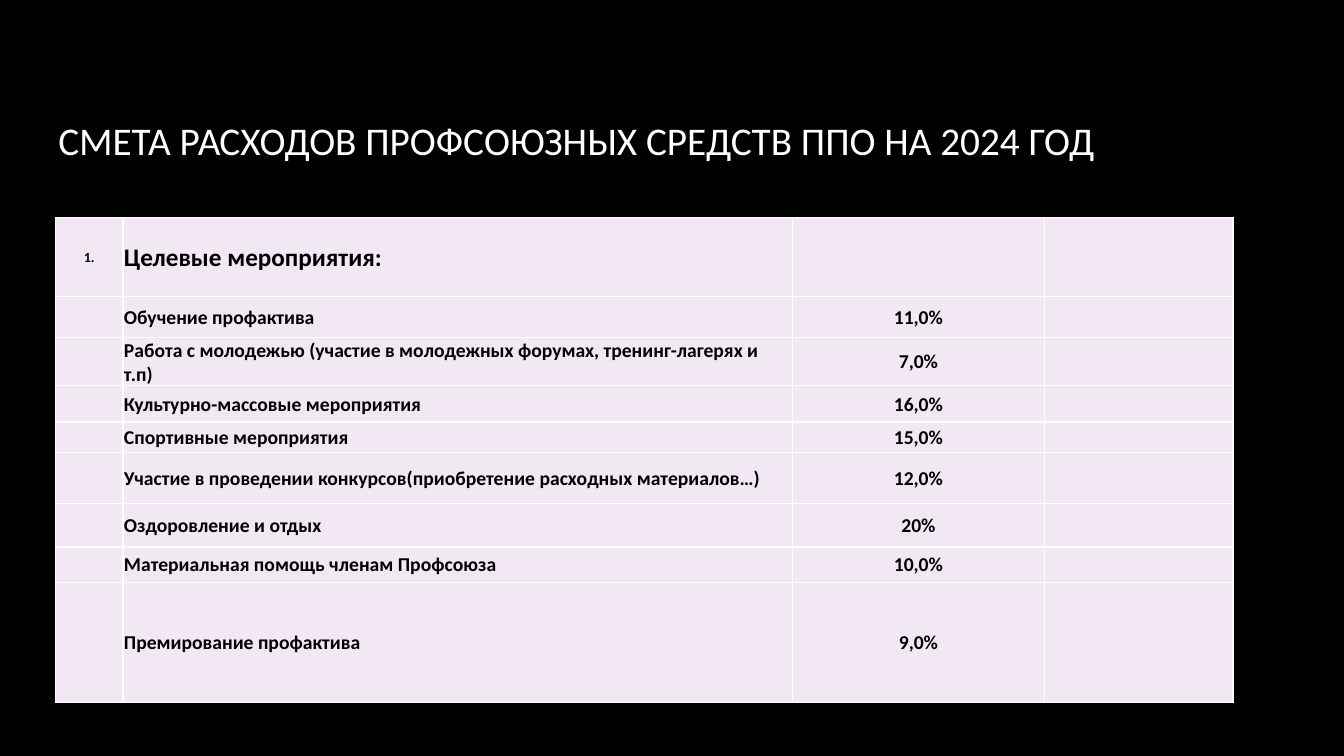
from lxml import etree
from pptx import Presentation
from pptx.dml.color import RGBColor
from pptx.enum.text import MSO_ANCHOR, PP_ALIGN
from pptx.oxml.ns import qn
from pptx.util import Inches, Pt

MIDDLE = MSO_ANCHOR.MIDDLE
LEFT, CENTER = PP_ALIGN.LEFT, PP_ALIGN.CENTER
FONT = "Calibri"
COLORS = {"page": "000000", "title": "FFFFFF", "cell": "F1E8F4",
          "text": "000000", "border": "FFFFFF"}

TITLE = "СМЕТА РАСХОДОВ ПРОФСОЮЗНЫХ СРЕДСТВ ППО НА 2024 ГОД"
HEADING = ("1.", "Целевые мероприятия:")
EXPENSES = [
    ("Обучение профактива", "11,0%"),
    ("Работа с молодежью (участие в молодежных форумах, тренинг-лагерях и т.п)", "7,0%"),
    ("Культурно-массовые мероприятия", "16,0%"),
    ("Спортивные мероприятия", "15,0%"),
    ("Участие в проведении конкурсов(приобретение расходных материалов…)", "12,0%"),
    ("Оздоровление и отдых", "20%"),
    ("Материальная помощь членам Профсоюза", "10,0%"),
    ("Премирование профактива", "9,0%"),
]
COLUMN_WIDTHS = [0.67, 6.64, 2.5, 1.87]
ROW_HEIGHTS = [0.78, 0.41, 0.31, 0.36, 0.3, 0.51, 0.43, 0.35, 1.19]


def color(name):
    return RGBColor.from_string(COLORS[name])


def write(frame, text, size=14, ink="text", bold=False, align=LEFT):
    para = frame.paragraphs[0]
    para.alignment = align
    span = para.add_run()
    span.text = text
    span.font.name = FONT
    span.font.size = Pt(size)
    span.font.bold = bold
    span.font.color.rgb = color(ink)


def format_cell(cell):
    """Set the margins, borders and fill of a cell."""
    cell.vertical_anchor = MIDDLE
    cell.margin_left = cell.margin_right = cell.margin_top = Inches(0.01)
    cell.margin_bottom = 0
    properties = cell._tc.get_or_add_tcPr()
    for side in ("a:lnL", "a:lnR", "a:lnT", "a:lnB"):
        line = etree.SubElement(properties, qn(side), w=str(Pt(1)))
        fill = etree.SubElement(line, qn("a:solidFill"))
        etree.SubElement(fill, qn("a:srgbClr"), val=COLORS["border"])
    cell.fill.solid()
    cell.fill.fore_color.rgb = color("cell")


def add_title(page, left, top, width, height):
    box = page.shapes.add_textbox(Inches(left), Inches(top), Inches(width), Inches(height))
    frame = box.text_frame
    frame.word_wrap = True
    frame.vertical_anchor = MIDDLE
    write(frame, TITLE, size=28, ink="title")


def add_budget(page, left, top):
    table = page.shapes.add_table(
        len(ROW_HEIGHTS), len(COLUMN_WIDTHS), Inches(left), Inches(top),
        Inches(sum(COLUMN_WIDTHS)), Inches(sum(ROW_HEIGHTS))).table
    table.first_row = table.horz_banding = False
    for column, width in zip(table.columns, COLUMN_WIDTHS):
        column.width = Inches(width)
    for row, height in zip(table.rows, ROW_HEIGHTS):
        row.height = Inches(height)
    for cell in table.iter_cells():
        format_cell(cell)

    # Section heading
    number, heading = HEADING
    write(table.cell(0, 0).text_frame, number, size=10, bold=True, align=CENTER)
    write(table.cell(0, 1).text_frame, heading, size=18, bold=True)

    # Expense items and their shares
    for index, (item, share) in enumerate(EXPENSES, start=1):
        write(table.cell(index, 1).text_frame, item, bold=True)
        write(table.cell(index, 2).text_frame, share, bold=True, align=CENTER)

    # Small type in empty cells keeps the rows at their set height
    for cell in table.iter_cells():
        if not cell.text:
            para = cell.text_frame.paragraphs[0]
            etree.SubElement(para._p, qn("a:endParaRPr"), sz="1000")


def main():
    deck = Presentation()
    deck.slide_width, deck.slide_height = Inches(13.33), Inches(7.5)
    page = deck.slides.add_slide(deck.slide_layouts[6])
    page.background.fill.solid()
    page.background.fill.fore_color.rgb = color("page")
    add_title(page, 0.48, 0.59, 11.08, 1.59)
    add_budget(page, 0.55, 2.16)
    deck.save("out.pptx")


if __name__ == "__main__":
    main()
